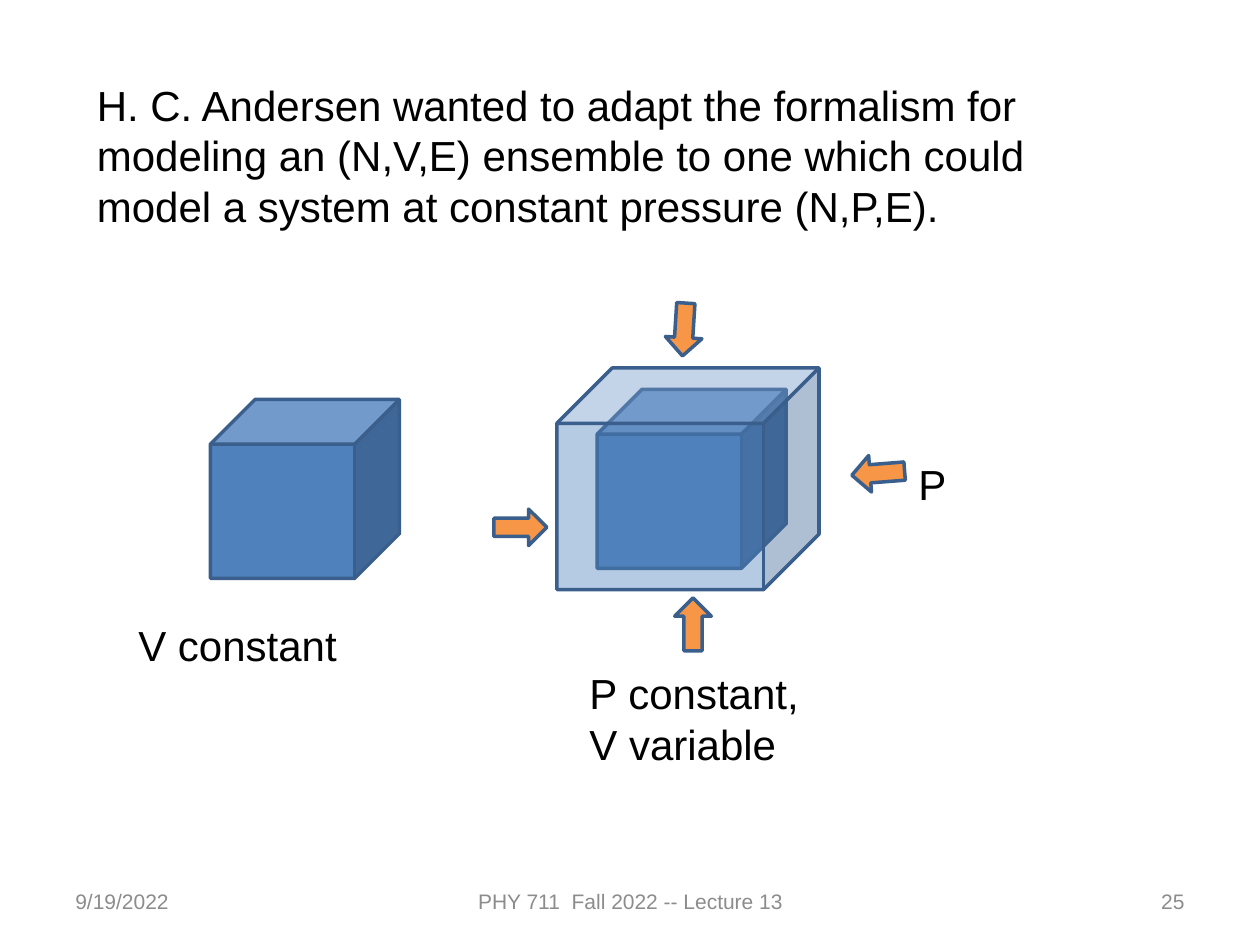
from pptx import Presentation
from pptx.dml.color import RGBColor
from pptx.enum.shapes import MSO_SHAPE
from pptx.enum.text import MSO_ANCHOR, PP_ALIGN
from pptx.oxml.ns import qn
from pptx.util import Inches, Pt
from lxml import etree

CUBE, ARROW = MSO_SHAPE.CUBE, MSO_SHAPE.RIGHT_ARROW
TOP, MIDDLE = MSO_ANCHOR.TOP, MSO_ANCHOR.MIDDLE
LEFT, CENTER, RIGHT = PP_ALIGN.LEFT, PP_ALIGN.CENTER, PP_ALIGN.RIGHT
BLACK = RGBColor(0x00, 0x00, 0x00)
GRAY = RGBColor(0x8C, 0x8C, 0x8C)
BLUE = RGBColor(0x4F, 0x81, 0xBD)
DARK_BLUE = RGBColor(0x3A, 0x5F, 0x8C)
ORANGE = RGBColor(0xF7, 0x96, 0x46)

presentation = Presentation()
presentation.slide_width = Inches(10)
presentation.slide_height = Inches(7.5)
slide = presentation.slides.add_slide(presentation.slide_layouts[6])


def add_text(text, box, size=24, color=BLACK, align=LEFT, anchor=TOP):
    text_box = slide.shapes.add_textbox(*map(Inches, box))
    frame = text_box.text_frame
    frame.word_wrap = True
    frame.vertical_anchor = anchor
    paragraph = frame.paragraphs[0]
    paragraph.alignment = align
    run = paragraph.add_run()
    run.text = text
    run.font.name = "Arial"
    run.font.size = Pt(size)
    run.font.color.rgb = color


def add_outlined(kind, box, fill, rotation=0):
    shape = slide.shapes.add_shape(kind, *map(Inches, box))
    shape.shadow.inherit = False
    shape.rotation = rotation
    shape.fill.solid()
    shape.fill.fore_color.rgb = fill
    shape.line.color.rgb = DARK_BLUE
    shape.line.width = Pt(2)
    return shape


# Footer
for text, left, width, align in [
    ("9/19/2022", 0.5, 2.33, LEFT),
    ("PHY 711  Fall 2022 -- Lecture 13", 3.42, 3.17, CENTER),
    ("25", 7.17, 2.33, RIGHT),
]:
    add_text(text, (left, 6.95, width, 0.4), 12, GRAY, align, MIDDLE)

add_text(
    "H. C. Andersen wanted to adapt the formalism for modeling an (N,V,E) "
    "ensemble to one which could model a system at constant pressure (N,P,E).",
    (0.67, 0.58, 8.17, 1.31),
)

# Fixed cube, then the same cube inside a translucent larger one
for left, top in [(1.67, 3.17), (4.74, 3.09)]:
    add_outlined(CUBE, (left, top, 1.5, 1.42), BLUE)
outer_cube = add_outlined(CUBE, (4.42, 2.92, 2.08, 1.76), BLUE)
fill_color = outer_cube.fill._xPr.find(qn("a:solidFill"))[0]
etree.SubElement(fill_color, qn("a:alpha"), val="42000")

# Pressure arrows
for left, top, rotation in [
    (5.22, 2.47, 93.6),
    (3.92, 4.04, 0),
    (5.29, 4.81, 270),
    (6.76, 3.61, 175.5),
]:
    add_outlined(ARROW, (left, top, 0.42, 0.29), ORANGE, rotation)

# Labels
for text, box in [
    ("V constant", (1, 4.87, 2.17, 0.5)),
    ("P", (7.19, 3.59, 1.4, 0.5)),
    ("P constant, V variable", (4.58, 5.25, 2.17, 0.91)),
]:
    add_text(text, box)

presentation.save("out.pptx")
